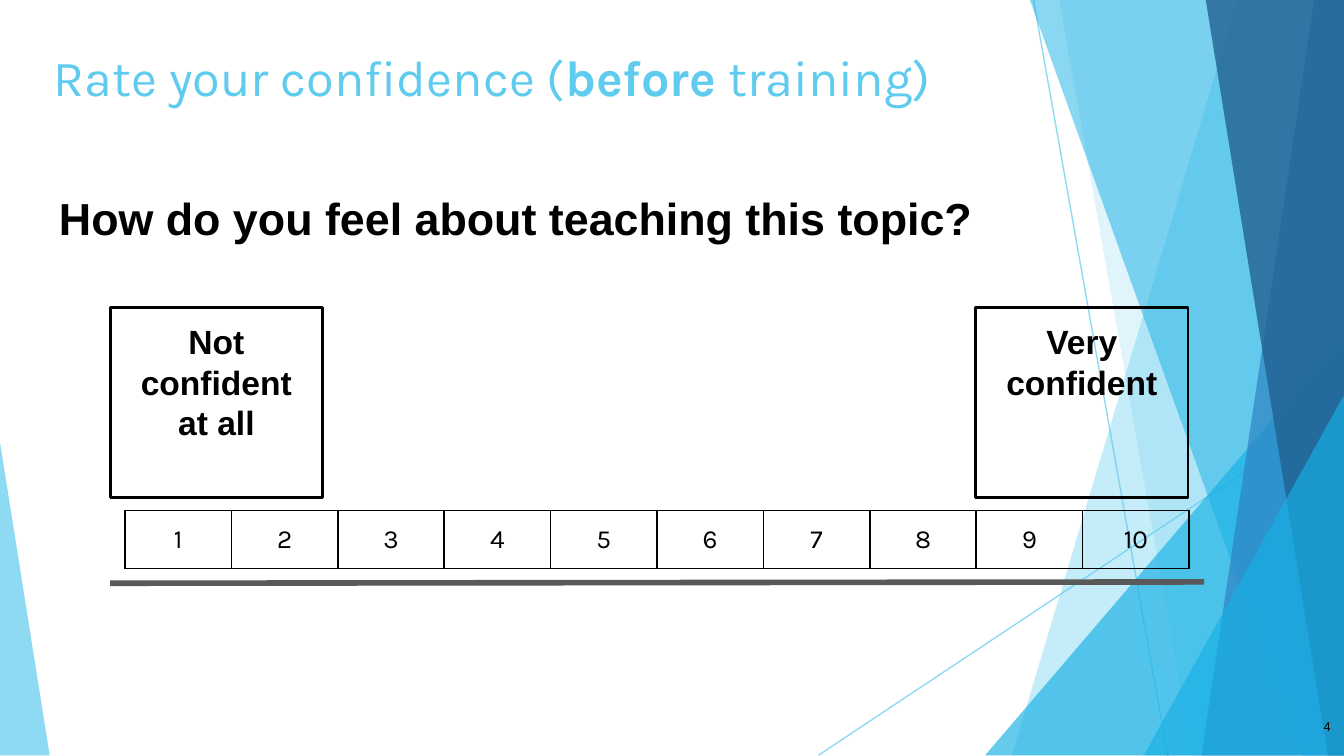
from lxml import etree
from pptx import Presentation
from pptx.dml.color import RGBColor
from pptx.enum import shapes, text
from pptx.oxml import ns
from pptx.util import Inches, Pt

COLORS = {
    "sky": "5FCBEF", "cyan": "17B0E4", "blue": "2E83C3", "navy": "226292",
    "black": "000000", "gray": "595959",
}
CENTER = text.PP_ALIGN.CENTER


def set_color(color_format, name, opacity=100):
    """Make a fill or line colour solid, with opacity in percent."""
    color_format.solid()
    color_format.fore_color.rgb = RGBColor.from_string(COLORS[name])
    if opacity < 100:
        clr = next(color_format._xPr.iter(ns.qn("a:srgbClr")))
        etree.SubElement(clr, ns.qn("a:alpha"), val=str(opacity * 1000))


def write(frame, spans, size, font, color="black", align=None,
          anchor=text.MSO_ANCHOR.TOP):
    """Fill a text frame with one paragraph of (words, bold) spans."""
    frame.word_wrap = True
    frame.auto_size = text.MSO_AUTO_SIZE.NONE
    frame.vertical_anchor = anchor
    frame.margin_left = frame.margin_right = Inches(0.1)
    frame.margin_top = frame.margin_bottom = Inches(0.1)
    para = frame.paragraphs[0]
    para.alignment = align
    for words, bold in spans:
        span = para.add_run()
        span.text = words
        span.font.size = Pt(size)
        span.font.name = font
        span.font.bold = bold
        span.font.color.rgb = RGBColor.from_string(COLORS[color])
    return para


deck = Presentation()
deck.slide_width = Inches(10)
deck.slide_height = deck.slide_width * 9 // 16
page = deck.slides.add_slide(deck.slide_layouts[5])

# Straight lines: start, end, colour, width, opacity; the last underlines the scale
lines = [
    ((7.69, 0), (8.69, 5.63), "sky", 0.75, 70),
    ((10, 3.02), (6.09, 5.62), "sky", 0.75, 70),
    ((0.82, 4.34), (8.96, 4.33), "gray", 3, 100),
]
for start, end, color, width, opacity in lines:
    line = page.shapes.add_connector(
        shapes.MSO_CONNECTOR.STRAIGHT, *map(Inches, start + end))
    set_color(line.line.fill, color, opacity)
    line.line.width = Pt(width)
    etree.SubElement(line._element.spPr, ns.qn("a:effectLst"))
scale_underline = line

# Facets, back to front. A band reaches the right edge and gives the x of its
# slanted side at top and bottom; a triangle gives its box and apex position.
facets = [
    ("band", (9.21, 7.53), "sky", 36),
    ("band", (7.88, 8.87), "sky", 20),
    ("triangle", (7.33, 2.5, 2.67, 3.12, 1), "cyan", 66),
    ("band", (7.66, 9.68), "cyan", 50),
    ("band", (9.78, 8.94), "blue", 70),
    ("band", (8.97, 9.88), "navy", 80),
    ("triangle", (8.51, 2.94, 1.49, 2.68, 1), "cyan", 66),
    ("triangle", (0, 3.29, 0.37, 2.33, 0), "sky", 70),
]
for kind, place, color, opacity in facets:
    if kind == "band":
        top_x, bottom_x = place
        outline = page.shapes.build_freeform(Inches(top_x), Inches(-0.01))
        corners = [(10, -0.01), (10, 5.62), (bottom_x, 5.62)]
        outline.add_line_segments([(Inches(x), Inches(y)) for x, y in corners])
        facet = outline.convert_to_shape()
    else:
        *box, apex = place
        facet = page.shapes.add_shape(
            shapes.MSO_SHAPE.ISOSCELES_TRIANGLE, *map(Inches, box))
        facet.adjustments[0] = apex
    facet.shadow.inherit = False
    facet.line.fill.background()
    set_color(facet.fill, color, opacity)

# Title, brought in front of the facets
title = page.shapes.title
title.left, title.top = Inches(0.3), Inches(0.24)
title.width, title.height = Inches(9.36), Inches(0.63)
page.shapes.element.append(title.element)
write(title.text_frame,
      [("Rate your confidence (", False), ("before", True), (" training)", False)],
      27, "Karla", "sky", text.PP_ALIGN.LEFT)

number = page.shapes.add_textbox(Inches(9.4), Inches(5.19), Inches(0.6), Inches(0.43))
write(number.text_frame, [("4", False)], 6.8, "Arial",
      align=text.PP_ALIGN.RIGHT, anchor=text.MSO_ANCHOR.MIDDLE)

question = page.shapes.add_textbox(Inches(0.34), Inches(1.26), Inches(9.32), Inches(3.74))
para = write(question.text_frame,
             [("How do you feel about teaching this topic?", True)], 24, "Arial")
para.line_spacing = 1.15
para.space_after = Pt(16)

for left, words in [(0.82, "Not confident at all"), (7.26, "Very confident")]:
    box = page.shapes.add_shape(shapes.MSO_SHAPE.RECTANGLE, Inches(left), Inches(2.29),
                                Inches(1.58), Inches(1.41))
    box.shadow.inherit = False
    box.fill.background()
    set_color(box.line.fill, "black")
    box.line.width = Pt(1.5)
    write(box.text_frame, [(words, True)], 18, "Arial", align=CENTER)

# Rating scale
scale = page.shapes.add_table(1, 10, Inches(0.93), Inches(3.8),
                              Inches(7.92), Inches(0.43)).table
scale.first_row = scale.horz_banding = False
for rating, cell in enumerate(scale.iter_cells(), start=1):
    write(cell.text_frame, [(str(rating), False)], 14, "Karla", align=CENTER)
    cell.margin_left = cell.margin_right = Inches(0.1)
    cell.margin_top = cell.margin_bottom = Inches(0.1)
    cell.vertical_anchor = text.MSO_ANCHOR.TOP
    props = cell._tc.get_or_add_tcPr()
    for side in ("lnL", "lnR", "lnT", "lnB"):
        border = etree.SubElement(props, ns.qn(f"a:{side}"), w=str(Pt(1)))
        paint = etree.SubElement(border, ns.qn("a:solidFill"))
        etree.SubElement(paint, ns.qn("a:srgbClr"), val=COLORS["black"])
    cell.fill.background()
page.shapes.element.append(scale_underline._element)

deck.save("out.pptx")
